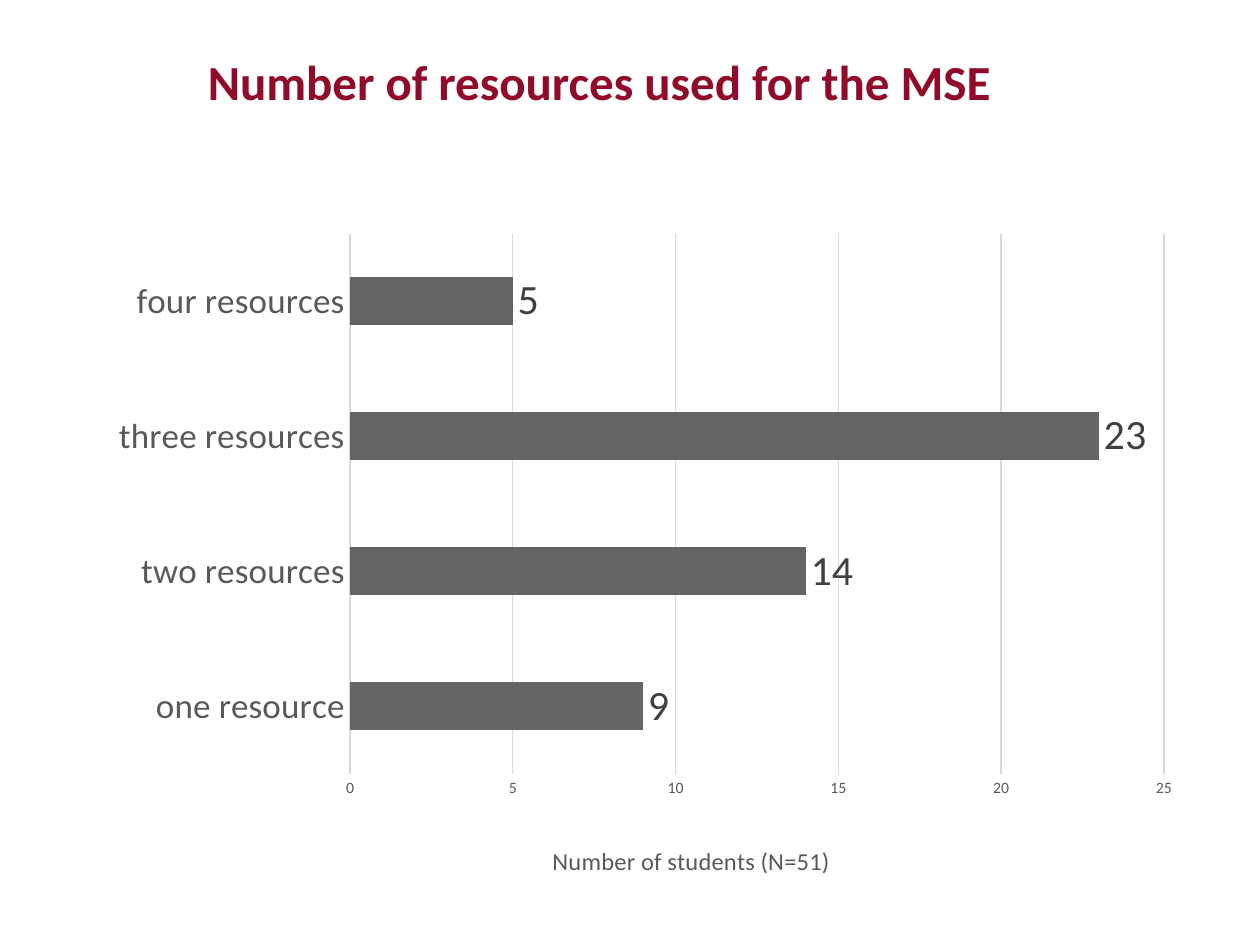
from lxml.etree import SubElement as Sub
from pptx import Presentation
from pptx.chart.data import CategoryChartData as Data
from pptx.dml.color import RGBColor as RGB
from pptx.enum.chart import XL_CHART_TYPE as Kind, XL_LABEL_POSITION as Pos
from pptx.enum.chart import XL_TICK_MARK as Tick
from pptx.enum.text import MSO_ANCHOR as Anchor, PP_ALIGN as Align
from pptx.oxml.ns import qn
from pptx.util import Pt

HUES = {"title": "910A29", "bar": "646464", "text": "595959",
        "label": "404040", "grid": "D9D9D9"}
COUNTS = {"one resource": 9, "two resources": 14,
          "three resources": 23, "four resources": 5}


def style(font, size, hue, bold=False):
    """Set the face, size, colour and weight of a font."""
    font.name, font.size, font.bold = "Calibri", Pt(size), bold
    font.color.rgb = RGB.from_string(HUES[hue])


def write(frame, text, size, hue, bold=False, align=None, pitch=None):
    """Put one formatted paragraph in a text frame."""
    para = frame.paragraphs[0]
    para.alignment = align
    if pitch:
        para.line_spacing = Pt(pitch)
    run = para.add_run()
    run.text = text
    style(run.font, size, hue, bold)


def place(node, index, **spots):
    """Give a chart part a manual layout in fractions of the chart."""
    for old in node.findall(qn("c:layout")):
        node.remove(old)
    lay = node.makeelement(qn("c:layout"))
    node.insert(index, lay)
    man = Sub(lay, qn("c:manualLayout"))
    if "w" in spots:
        Sub(man, qn("c:layoutTarget"), val="inner")
    for key in "xy":
        Sub(man, qn(f"c:{key}Mode"), val="edge")
    for key, val in spots.items():
        Sub(man, qn(f"c:{key}"), val=str(val))


def rule(line):
    """Draw a thin grey line."""
    line.color.rgb = RGB.from_string(HUES["grid"])
    line.width = Pt(0.75)


def add_title(slide, text):
    """Move and fill the title placeholder."""
    title = slide.shapes.title
    title.left, title.top = Pt(118.8), Pt(12.24)
    title.width, title.height = Pt(482.4), Pt(74.16)
    frame = title.text_frame
    frame.word_wrap = True
    frame.vertical_anchor = Anchor.MIDDLE
    frame.margin_left = frame.margin_bottom = 0
    frame.margin_right, frame.margin_top = Pt(7.2), Pt(3.6)
    write(frame, text, 28, "title", bold=True, align=Align.LEFT, pitch=24)


def add_axes(chart):
    """Format both axes and name the value axis."""
    cat, val = chart.category_axis, chart.value_axis
    for axis, size in ((cat, 20), (val, 9)):
        axis.major_tick_mark = axis.minor_tick_mark = Tick.NONE
        style(axis.tick_labels.font, size, "text")
    rule(cat.format.line)
    val.format.line.fill.background()
    rule(val.major_gridlines.format.line)
    val.minimum_scale, val.maximum_scale, val.major_unit = 0, 25, 5
    name = val.axis_title
    write(name.text_frame, "Number of students (N=51)", 14, "text")
    place(name._element, 1, x=0.41, y=0.94)


def add_bars(slide):
    """Add the bar chart of student counts."""
    data = Data()
    data.categories = list(COUNTS)
    data.add_series("Series 1", list(COUNTS.values()))
    chart = slide.shapes.add_chart(
        Kind.BAR_CLUSTERED, Pt(55.44), Pt(126), Pt(628.56), Pt(379.44),
        data).chart
    chart.has_title = chart.has_legend = False
    chart.font.name, chart.font.size = "Calibri", Pt(10)
    add_axes(chart)
    plot = chart.plots[0]
    plot.gap_width, plot.vary_by_categories = 182, False
    row = plot.series[0]
    row.format.fill.solid()
    row.format.fill.fore_color.rgb = RGB.from_string(HUES["bar"])
    tags = row.data_labels
    tags.show_value, tags.position = True, Pos.OUTSIDE_END
    style(tags.font, 24, "label")
    area = chart._chartSpace.chart.plotArea
    place(area, 0, x=0.23, y=0.02, w=0.74, h=0.82)


def main():
    """Build and save the slide."""
    deck = Presentation()
    deck.slide_width, deck.slide_height = Pt(720), Pt(540)
    slide = deck.slides.add_slide(deck.slide_layouts[5])
    add_title(slide, "Number of resources used for the MSE")
    add_bars(slide)
    deck.save("out.pptx")


if __name__ == "__main__":
    main()
